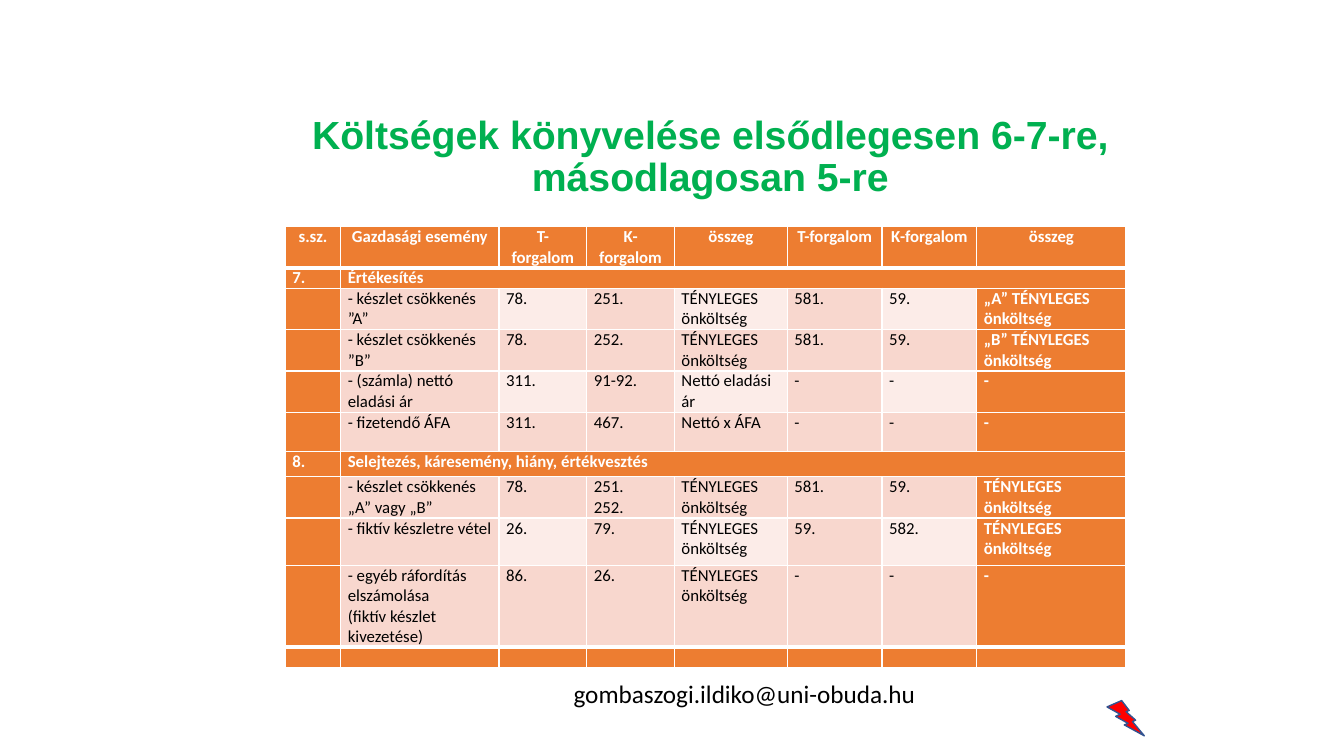
import pptx
import pptx.dml.color
import pptx.enum.shapes
import pptx.enum.text
import pptx.oxml
import pptx.oxml.ns
import pptx.util
from pptx.util import Inches

ORANGE, ROSE, PALE_ROSE = "ED7D31", "F8D7CE", "FCECE8"
WHITE, BLACK, GREEN, RED, BLUE = "FFFFFF", "000000", "00B050", "FF0000", "325491"
CENTER = pptx.enum.text.PP_ALIGN.CENTER

COLUMN_WIDTHS = [0.55, 1.57, 0.87, 0.87, 1.12, 0.94, 0.94, 1.48]
ROW_HEIGHTS = [0.4, 0.2, 0.41, 0.41, 0.41, 0.39, 0.25, 0.41, 0.47, 0.81, 0.2]
PALE_ROWS = (2, 4, 8)
ACTUAL_COST = "TÉNYLEGES önköltség"

# "\n" is a line break; a cell given as a list holds one paragraph per item.
ROWS = [
    ["s.sz.", "Gazdasági esemény", "T-forgalom", "K-forgalom", "összeg",
     "T-forgalom", "K-forgalom", "összeg"],
    ["7.", "Értékesítés"],
    ["", "- készlet csökkenés\n”A”", "78.", "251.", ACTUAL_COST, "581.", "59.",
     "„A” " + ACTUAL_COST],
    ["", "- készlet csökkenés\n”B”", "78.", "252.", ACTUAL_COST, "581.", "59.",
     "„B” " + ACTUAL_COST],
    ["", "- (számla) nettó eladási ár", "311.", "91-92.", "Nettó eladási ár", "-", "-", "-"],
    ["", "- fizetendő ÁFA", "311.", "467.", "Nettó x ÁFA", "-", "-", "-"],
    ["8.", "Selejtezés, káresemény, hiány, értékvesztés"],
    ["", ["- készlet csökkenés", "„A” vagy „B”"], "78.", "251.\n252.", ACTUAL_COST,
     "581.", "59.", ACTUAL_COST],
    ["", "- fiktív készletre vétel", "26.", "79.", ACTUAL_COST, "59.", "582.", ACTUAL_COST],
    ["", "- egyéb ráfordítás elszámolása\n(fiktív készlet kivezetése)", "86.", "26.",
     ACTUAL_COST, "-", "-", "-"],
    [""] * 8,
]


def color(value):
    return pptx.dml.color.RGBColor.from_string(value)


class SlideBuilder:
    def __init__(self, presentation):
        self.slide = presentation.slides.add_slide(presentation.slide_layouts[5])

    def style_font(self, font, size, value, bold=False, name="Calibri"):
        font.name, font.size, font.bold = name, pptx.util.Pt(size), bold
        font.color.rgb = color(value)

    def add_runs(self, paragraph, text, *style):
        """Add text run by run, with a line break at each newline."""
        for index, line in enumerate(text.split("\n")):
            if index:
                paragraph.add_line_break()
            run = paragraph.add_run()
            run.text = line
            self.style_font(run.font, *style)

    def title(self, text, left, top, width, height):
        title = self.slide.shapes.title
        title.left, title.top = Inches(left), Inches(top)
        title.width, title.height = Inches(width), Inches(height)
        frame = title.text_frame
        frame.word_wrap = True
        frame.auto_size = pptx.enum.text.MSO_AUTO_SIZE.NONE
        frame.vertical_anchor = pptx.enum.text.MSO_ANCHOR.MIDDLE
        paragraph = frame.paragraphs[0]
        paragraph.alignment, paragraph.line_spacing = CENTER, 0.9
        self.add_runs(paragraph, text, 28, GREEN, True, "Arial")

    def text(self, text, left, top, width, height):
        box = self.slide.shapes.add_textbox(
            Inches(left), Inches(top), Inches(width), Inches(height))
        box.text_frame.word_wrap = True
        self.add_runs(box.text_frame.paragraphs[0], text, 18, BLACK)

    def lightning(self, left, top, width, height):
        shape = self.slide.shapes.add_shape(
            pptx.enum.shapes.MSO_SHAPE.LIGHTNING_BOLT,
            Inches(left), Inches(top), Inches(width), Inches(height))
        shape.shadow.inherit = False
        shape.fill.solid()
        shape.fill.fore_color.rgb = color(RED)
        shape.line.color.rgb = color(BLUE)
        shape.line.width = pptx.util.Pt(1)

    def borders(self, cell, top, bottom):
        """Draw white borders, 1 pt wide at the sides."""
        properties = cell._tc.get_or_add_tcPr()
        for side, points in (("L", 1), ("R", 1), ("T", top), ("B", bottom)):
            properties.append(pptx.oxml.parse_xml(
                f'<a:ln{side} {pptx.oxml.ns.nsdecls("a")} w="{pptx.util.Pt(points)}">'
                f'<a:solidFill><a:srgbClr val="{WHITE}"/></a:solidFill></a:ln{side}>'))

    def cell(self, cell, content, fill, bold, centered):
        cell.margin_left = cell.margin_right = Inches(0.07)
        cell.margin_top = cell.margin_bottom = 0
        cell.fill.solid()
        cell.fill.fore_color.rgb = color(fill)
        frame = cell.text_frame
        style = (12, WHITE if bold else BLACK, bold)
        texts = content if isinstance(content, list) else [content]
        for index, text in enumerate(texts):
            paragraph = frame.add_paragraph() if index else frame.paragraphs[0]
            if centered:
                paragraph.alignment = CENTER
            if text:
                self.add_runs(paragraph, text, *style)
            else:
                paragraph._p.get_or_add_endParaRPr().set("sz", "1200")

    def table(self, rows, left, top):
        last_row, last_column = len(rows) - 1, len(COLUMN_WIDTHS) - 1
        table = self.slide.shapes.add_table(
            len(rows), len(COLUMN_WIDTHS), Inches(left), Inches(top),
            Inches(sum(COLUMN_WIDTHS)), Inches(sum(ROW_HEIGHTS))).table
        table.first_row = table.horz_banding = False
        for column, width in zip(table.columns, COLUMN_WIDTHS):
            column.width = Inches(width)
        for row, height in zip(table.rows, ROW_HEIGHTS):
            row.height = Inches(height)
        for row_index, contents in enumerate(rows):
            is_section = len(contents) == 2
            if is_section:
                table.cell(row_index, 1).merge(table.cell(row_index, last_column))
            for column_index in range(last_column + 1):
                cell = table.cell(row_index, column_index)
                content = contents[column_index] if column_index < len(contents) else ""
                strong = (is_section or row_index in (0, last_row)
                          or column_index in (0, last_column))
                pale = row_index in PALE_ROWS and column_index in (2, 4, 6)
                fill = ORANGE if strong else PALE_ROSE if pale else ROSE
                self.borders(cell, top=3 if row_index in (1, last_row) else 1,
                             bottom=3 if row_index in (0, last_row - 1) else 1)
                self.cell(cell, content, fill, strong, row_index == 0)


def main():
    presentation = pptx.Presentation()
    presentation.slide_width, presentation.slide_height = Inches(13.33), Inches(7.5)
    builder = SlideBuilder(presentation)
    builder.title("Költségek könyvelése elsődlegesen 6-7-re, másodlagosan 5-re",
                  2.83, 1.13, 8.43, 0.87)
    builder.table(ROWS, 2.83, 2.25)
    builder.text("gombaszogi.ildiko@uni-obuda.hu", 5.59, 6.68, 7.75, 0.4)
    builder.lightning(10.98, 6.95, 0.37, 0.35)
    presentation.save("out.pptx")


if __name__ == "__main__":
    main()
